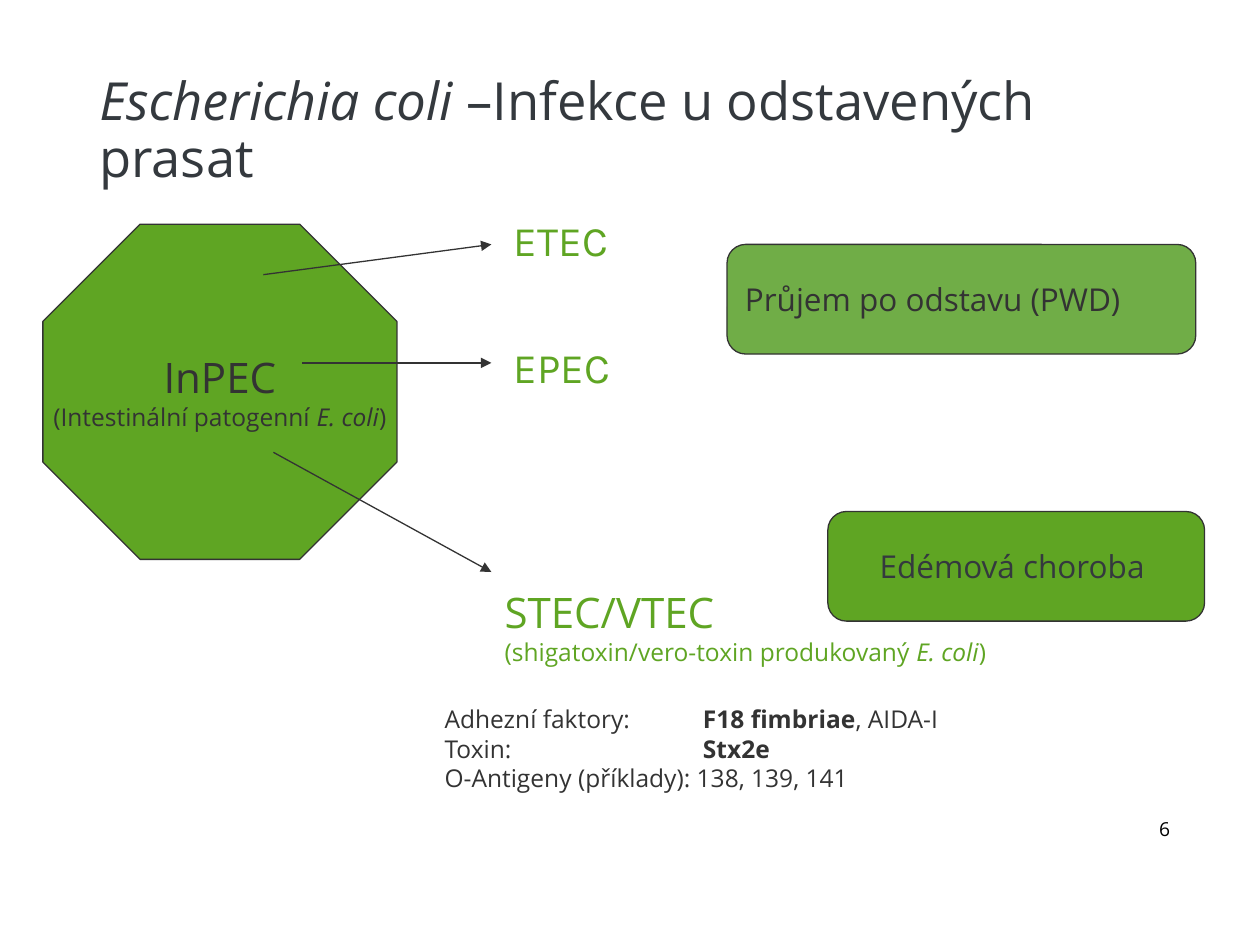
import pptx
import pptx.util
import pptx.oxml.ns
from pptx.dml.color import RGBColor
from pptx.enum.shapes import MSO_CONNECTOR, MSO_SHAPE
from pptx.enum.text import MSO_ANCHOR, PP_ALIGN
from lxml import etree

GREEN = RGBColor(0x5F, 0xA5, 0x23)
SOFT_GREEN = RGBColor(0x70, 0xAD, 0x47)
DARK = RGBColor(0x33, 0x33, 0x33)
SLATE = RGBColor(0x34, 0x39, 0x3E)
BLACK = RGBColor(0, 0, 0)

# The slide is a grid of 100 columns by 75 rows
COLS, ROWS = 100, 75
CELL = pptx.util.Inches(0.1)


def grid(*values):
    return [round(v * CELL) for v in values]


def sub(parent, tag, **attrs):
    return etree.SubElement(parent, pptx.oxml.ns.qn(tag), attrs)


def write(sp, lines, color, font="Open Sans", align=PP_ALIGN.LEFT,
          anchor=MSO_ANCHOR.MIDDLE, wrap=False, tabs=()):
    """Each line is (size, runs); a run is (text, style), style "", "b" or "i"."""
    tf = sp.text_frame
    tf.word_wrap = wrap
    tf.vertical_anchor = anchor
    for i, (size, runs) in enumerate(lines):
        p = tf.add_paragraph() if i else tf.paragraphs[0]
        p.alignment = align
        if tabs:
            tab_list = sub(p._p.get_or_add_pPr(), "a:tabLst")
            for pos in grid(*tabs):
                sub(tab_list, "a:tab", pos=str(pos), algn="l")
        p.font.name, p.font.size = font, pptx.util.Pt(size)
        p.font.color.rgb = color
        for text, style in runs:
            r = p.add_run()
            r.text = text
            if style == "b":
                r.font.bold = True
            elif style == "i":
                r.font.italic = True
    return tf


def add_text(s, box, lines, color, **options):
    return write(s.shapes.add_textbox(*grid(*box)), lines, color, **options)


def add_box(s, kind, box, lines, color, fill=None, adjust=0.17, **options):
    sp = s.shapes.add_shape(kind, *grid(*box))
    sp.shadow.inherit = False
    sp.adjustments[0] = adjust
    if fill is None:
        sp.fill.background()
        sp.line.fill.background()
    else:
        sp.fill.solid()
        sp.fill.fore_color.rgb = fill
        sp.line.color.rgb = DARK
        sp.line.width = pptx.util.Pt(0.75)
    write(sp, lines, color, **options)


def add_arrow(s, *ends):
    line = s.shapes.add_connector(MSO_CONNECTOR.STRAIGHT, *grid(*ends))
    line.line.color.rgb = DARK
    line.line.width = pptx.util.Pt(0.75)
    sub(line.line._get_or_add_ln(), "a:tailEnd", type="triangle")
    sub(line._element.spPr, "a:effectLst")


def main():
    prs = pptx.Presentation()
    prs.slide_width, prs.slide_height = grid(COLS, ROWS)
    s = prs.slides.add_slide(prs.slide_layouts[6])

    # Title and slide number
    tf = add_text(s, (6.9, 5.5, 86.4, 6.7),
                  [(30, [("Escherichia coli ", "i"),
                         ("–Infekce u odstavených prasat", "")])],
                  SLATE, anchor=MSO_ANCHOR.TOP, wrap=True)
    tf.paragraphs[0].line_spacing = 0.9
    tf = add_text(s, (92, 64.8, 3.9, 1.9), [(11, [("6", "")])], BLACK)
    tf.margin_left = tf.margin_right = tf.margin_top = tf.margin_bottom = 0

    # Pathogen group
    add_box(s, MSO_SHAPE.OCTAGON, (3.4, 17.8, 28.1, 26.6),
            [(24, [("InPEC", "")]),
             (14, [("(Intestinální patogenní ", ""), ("E. coli", "i"), (")", "")])],
            DARK, GREEN, adjust=0.29, align=PP_ALIGN.CENTER)

    # Pathotypes
    for name, top, height in (("ETEC", 15.5, 7.1), ("EPEC", 24.1, 10)):
        add_text(s, (39.8, top, 10, height), [(24, [(name, "")])], GREEN, font="Karla")
    add_box(s, MSO_SHAPE.ROUNDED_RECTANGLE, (38.6, 45, 38.2, 9.4),
            [(24, [("STEC/VTEC", "")]),
             (14, [("(shigatoxin/vero-toxin produkovaný ", ""),
                   ("E. coli", "i"), (")", "")])],
            GREEN)

    # Diseases
    add_box(s, MSO_SHAPE.ROUNDED_RECTANGLE, (57.7, 19.4, 37.2, 8.7),
            [(18, [("Průjem po odstavu (PWD)", "")])], DARK, SOFT_GREEN)
    add_box(s, MSO_SHAPE.ROUNDED_RECTANGLE, (65.7, 40.6, 29.9, 8.7),
            [(18, [("Edémová choroba ", "")])], SLATE, GREEN, align=PP_ALIGN.CENTER)

    # Arrows from the group to the pathotypes
    for x, y, end_y in ((20.9, 21.8, 19.4), (24, 28.8, 28.8), (21.7, 35.9, 45.4)):
        add_arrow(s, x, y, 39, end_y)

    # Virulence factors
    add_text(s, (34.3, 54.4, 51.2, 10),
             [(14, [("Adhezní faktory:\t", ""), (" F18 fimbriae", "b"), (", AIDA-I", "")]),
              (14, [("Toxin:\t \t ", ""), ("Stx2e", "b")]),
              (14, [("O-Antigeny (příklady): 138, 139, 141", "")])],
             DARK, tabs=(10, 20))

    prs.save("out.pptx")


if __name__ == "__main__":
    main()
